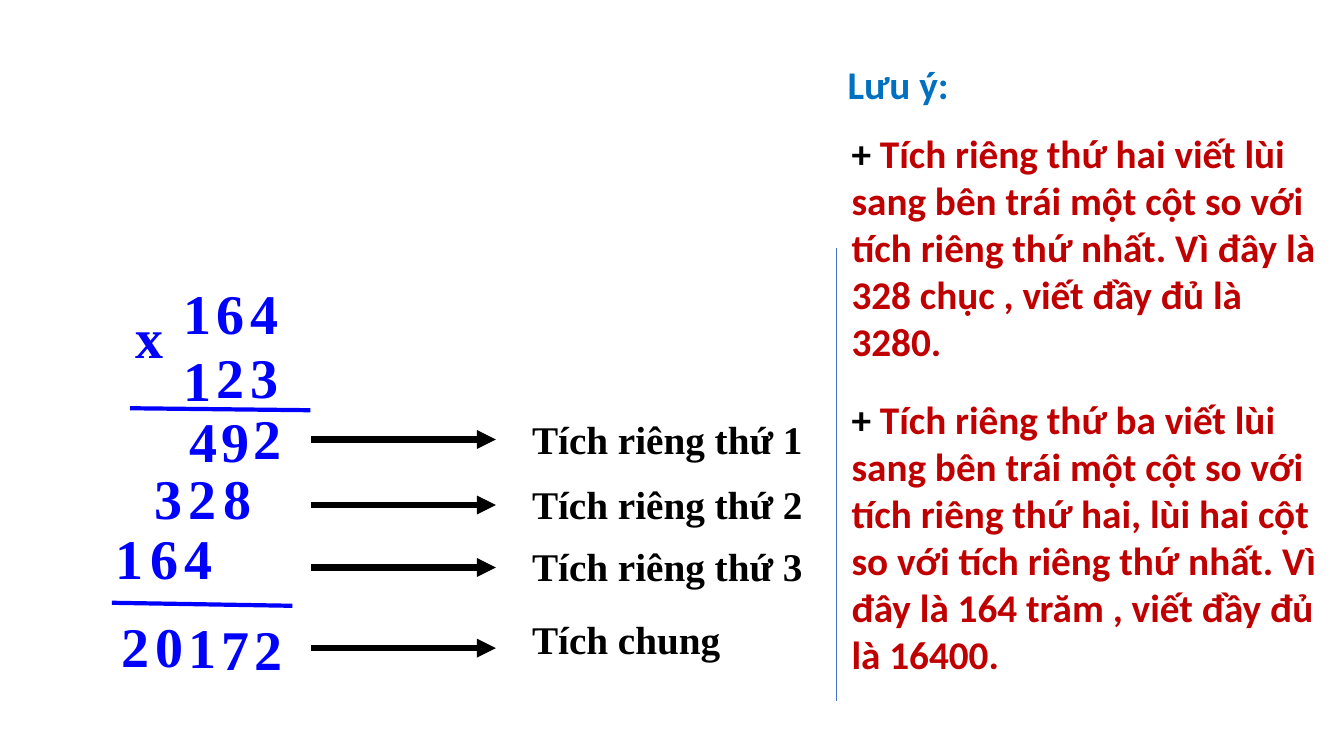
from lxml.etree import SubElement
from pptx import Presentation
from pptx.dml.color import RGBColor as RGB
from pptx.enum.shapes import MSO_CONNECTOR as Link
from pptx.enum.text import MSO_AUTO_SIZE as Fit
from pptx.oxml.ns import qn
from pptx.util import Inches, Pt

WIDE, HIGH = Inches(13.33), Inches(7.5)
COLS, ROWS = 40, 30
BLUE, BLACK, RED = "0000FF", "000000", "C00000"
SUM = {"name": "Times New Roman", "size": Pt(40), "bold": True}
LABEL = {**SUM, "size": Pt(28)}
NOTE = {**LABEL, "name": "Calibri"}


def tint(code):
    return RGB.from_string(code)


class Board:
    """A slide on a grid of 40 columns by 30 rows; a column is one digit wide."""

    def __init__(self, deck):
        self.shapes = deck.slides.add_slide(deck.slide_layouts[6]).shapes

    def spot(self, col, row):
        return round(col * WIDE / COLS), round(row * HIGH / ROWS)

    def text(self, at, size, runs, style, lead=0):
        """Write (words, colour) runs; lead is the space before, in percent."""
        frame = self.shapes.add_textbox(*self.spot(*at), *self.spot(*size)).text_frame
        frame.word_wrap = True
        frame.auto_size = Fit.SHAPE_TO_FIT_TEXT
        para = frame.paragraphs[0]
        if lead:
            gap = SubElement(para._p.get_or_add_pPr(), qn("a:spcBef"))
            SubElement(gap, qn("a:spcPct"), val=str(lead * 1000))
        for words, code in runs:
            run = para.add_run()
            run.text = words
            for key, value in style.items():
                setattr(run.font, key, value)
            run.font.color.rgb = tint(code)

    def digit(self, col, row, sign):
        self.text((col, row), (1.26, 3.08), [(sign, BLUE)], SUM, lead=50)

    def number(self, digits, col, row, pitch, drops=()):
        """Write digits one by one; drops lower single digits by part of a row."""
        for i, sign in enumerate(digits):
            drop = drops[i] if drops else 0
            self.digit(col + i * pitch, row + drop, sign)

    def line(self, start, end, code, width, arrow=False):
        link = self.shapes.add_connector(
            Link.STRAIGHT, *self.spot(*start), *self.spot(*end))
        link.line.color.rgb = tint(code)
        link.line.width = Pt(width)
        if arrow:
            SubElement(link.line._get_or_add_ln(), qn("a:tailEnd"), type="triangle")
        SubElement(link._element.spPr, qn("a:effectLst"))


NUMBERS = [
    ("164", 5.16, 10.84, 1),
    ("123", 5.16, 13.4, 1, (0.12, 0, 0)),
    ("492", 5.34, 15.92, 0.95, (0, 0, -0.12)),
    ("328", 4.29, 18.2, 1.03),
    ("164", 3.15, 20.56, 1.03),
    ("20172", 3.33, 24.08, 0.99, (0, 0, 0.04, 0.12, 0.12)),
]
RULES = [((3.87, 16.2), (9.24, 16.28)), ((3.33, 23.92), (8.7, 24.04))]
# words, arrow row, label row, label width
LABELS = [
    ("Tích riêng thứ 1", 17.44, 16.28, 12.42),
    ("Tích riêng thứ 2", 20.04, 18.88, 9.69),
    ("Tích riêng thứ 3", 22.52, 21.32, 8.76),
    ("Tích chung", 25.72, 24.24, 8.46),
]
NOTES = [
    (4.92, 9.84, "Tích riêng thứ hai viết lùi sang bên trái một cột so với "
     "tích riêng thứ nhất. Vì đây là 328 chục , viết đầy đủ là 3280."),
    (15.48, 11.72, "Tích riêng thứ ba viết lùi sang bên trái một cột so với "
     "tích riêng thứ hai, lùi hai cột so với tích riêng thứ nhất. "
     "Vì đây là 164 trăm , viết đầy đủ là 16400."),
]


def main():
    deck = Presentation()
    deck.slide_width, deck.slide_height = WIDE, HIGH
    board = Board(deck)

    for number in NUMBERS:
        board.number(*number)
    board.digit(3.75, 11.8, "x")
    for start, end in RULES:
        board.line(start, end, BLUE, 3)

    for words, level, top, width in LABELS:
        board.line((9.27, level), (14.76, level), BLACK, 4.5, arrow=True)
        board.text((15.54, top), (width, 2.28), [(words, BLACK)], LABEL)

    board.line((24.9, 9.84), (24.9, 27.8), "4472C4", 0.5)
    board.text((24.93, 2.2), (6.06, 3.52), [("Lưu ý:", "0070C0")], NOTE)
    for top, height, words in NOTES:
        runs = [("+ ", BLACK), (words, RED)]
        board.text((25.05, top), (14.46, height), runs, NOTE)

    deck.save("out.pptx")


if __name__ == "__main__":
    main()
